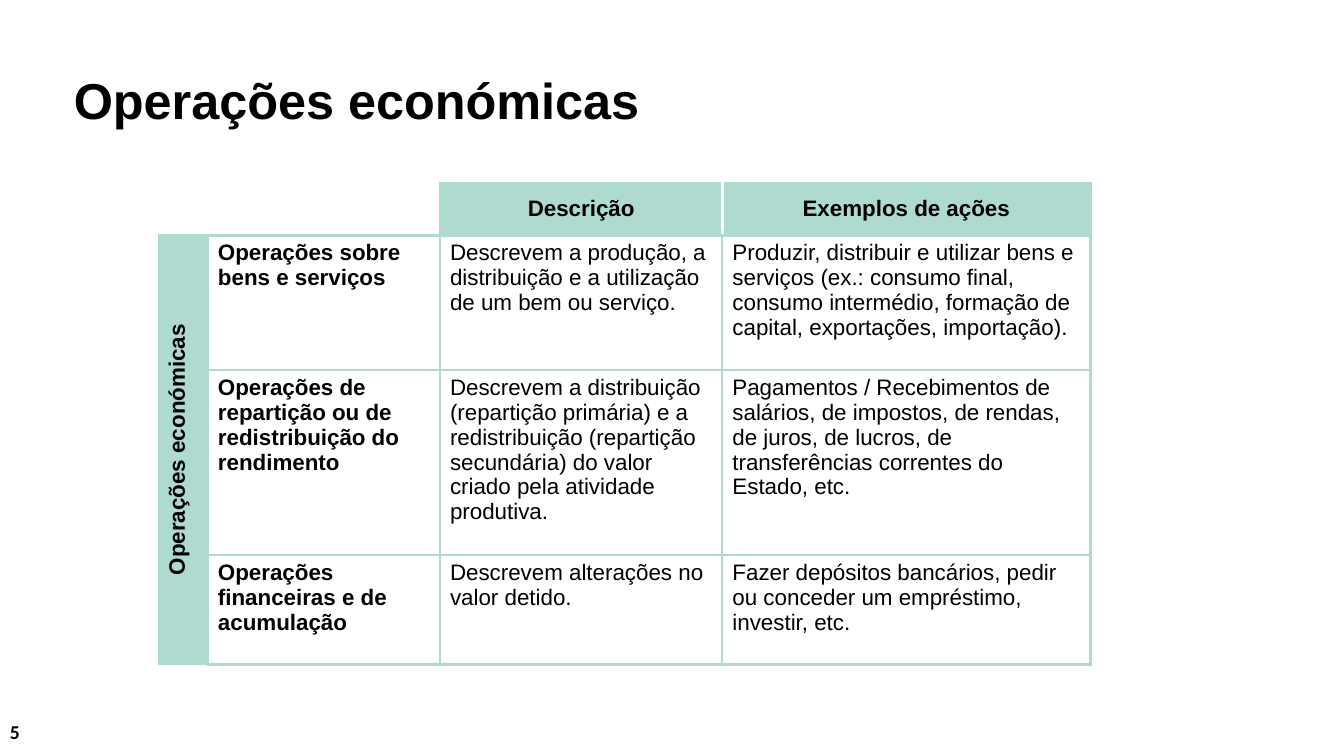
import pptx
import pptx.dml.color
import pptx.enum.text
import pptx.oxml.ns
import pptx.util
from lxml import etree

Pt = pptx.util.Pt
RGB = pptx.dml.color.RGBColor.from_string
ALIGN = pptx.enum.text.PP_ALIGN
ANCHOR = pptx.enum.text.MSO_ANCHOR
qn = pptx.oxml.ns.qn

HUES = {"ink": "000000", "mint": "AFDAD0", "white": "FFFFFF"}
COLS = [34.5, 165.75, 201.75, 262.75]
ROWS = [37, 96.5, 132, 78]
HEAVY = (0, 1, 4)
CELLS = [
    ["", "", "Descrição", "Exemplos de ações"],
    ["Operações económicas", "Operações sobre bens e serviços",
     "Descrevem a produção, a distribuição e a utilização de um bem ou serviço.",
     "Produzir, distribuir e utilizar bens e serviços (ex.: consumo final, "
     "consumo intermédio, formação de capital, exportações, importação)."],
    ["", "Operações de repartição ou de redistribuição do rendimento",
     "Descrevem a distribuição (repartição primária) e a redistribuição "
     "(repartição secundária) do valor criado pela atividade produtiva.",
     "Pagamentos / Recebimentos de salários, de impostos, de rendas, de juros, "
     "de lucros, de transferências correntes do Estado, etc."],
    ["", "Operações financeiras e de acumulação",
     "Descrevem alterações no valor detido.",
     "Fazer depósitos bancários, pedir ou conceder um empréstimo, investir, etc."],
]


def write(frame, text, size=16, face="Arial", bold=True, align=ALIGN.LEFT, lead=None):
    para = frame.paragraphs[0]
    para.alignment = align
    if lead:
        para.line_spacing = lead
    run = para.add_run()
    run.text = text
    run.font.size = Pt(size)
    run.font.name = face
    run.font.bold = bold
    run.font.color.rgb = RGB(HUES["ink"])


def edge(cell, spot, side, width, hue):
    line = etree.Element(qn("a:ln" + side), w=str(Pt(width)))
    fill = etree.SubElement(line, qn("a:solidFill"))
    etree.SubElement(fill, qn("a:srgbClr"), val=HUES[hue])
    cell._tc.get_or_add_tcPr().insert(spot, line)


class Page:
    """Holds the style and the current slide."""

    def __init__(self, deck):
        self.slide = deck.slides.add_slide(deck.slide_layouts[5])

    def place(self, shape, left, top, width, height):
        shape.left, shape.top = Pt(left), Pt(top)
        shape.width, shape.height = Pt(width), Pt(height)

    def title(self, text, *box):
        shape = self.slide.shapes.title
        self.place(shape, *box)
        shape.text_frame.vertical_anchor = ANCHOR.TOP
        write(shape.text_frame, text, size=36, lead=0.9)

    def label(self, text, *box, **form):
        shape = self.slide.shapes.add_textbox(*map(Pt, box))
        shape.text_frame.word_wrap = True
        write(shape.text_frame, text, **form)

    def grid(self, left, top):
        box = map(Pt, (left, top, sum(COLS), sum(ROWS)))
        table = self.slide.shapes.add_table(len(ROWS), len(COLS), *box).table
        table.first_row = table.horz_banding = False
        for col, width in zip(table.columns, COLS):
            col.width = Pt(width)
        for row, height in zip(table.rows, ROWS):
            row.height = Pt(height)
        for r, line in enumerate(CELLS):
            for c, text in enumerate(line):
                self.fill(table.cell(r, c), r, c, text)
        side = table.cell(1, 0)
        side.merge(table.cell(3, 0))
        side._tc.get_or_add_tcPr().set("vert", "vert270")

    def fill(self, cell, r, c, text):
        corner = r == 0 and c < 2
        head = not corner and (r == 0 or c == 0)
        if head:
            cell.fill.solid()
            cell.fill.fore_color.rgb = RGB(HUES["mint"])
            cell.vertical_anchor = ANCHOR.MIDDLE
        else:
            cell.fill.background()
        if text:
            write(cell.text_frame, text, bold=head or c == 1,
                  align=ALIGN.CENTER if head else ALIGN.LEFT)
        sides = [("L", c), ("R", c + 1), ("T", r), ("B", r + 1)]
        if corner:
            sides = [s for s in sides if s[0] == "B" or s == ("R", 2)]
        for spot, (side, n) in enumerate(sides):
            top = r == 0 and side in "LR"
            width = 2.25 if n in HEAVY or top else 1.5
            edge(cell, spot, side, width, "white" if top and n == 3 else "mint")


def main():
    deck = pptx.Presentation()
    deck.slide_width, deck.slide_height = Pt(960), Pt(540)
    page = Page(deck)
    page.label("5", 0, 511, 216, 29, size=14, face="Calibri")
    page.title("Operações económicas", 45.5, 50.5, 881, 75.5)
    page.grid(114, 131)
    deck.save("out.pptx")


if __name__ == "__main__":
    main()
